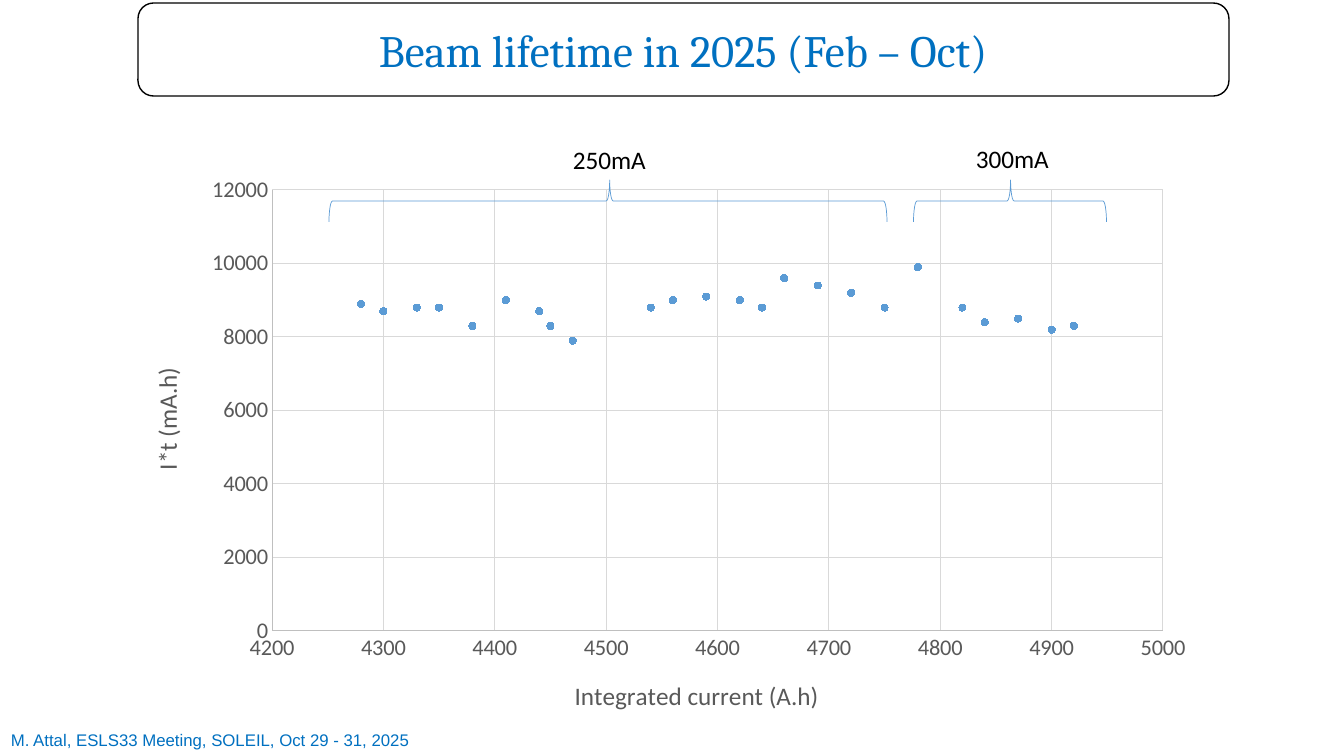
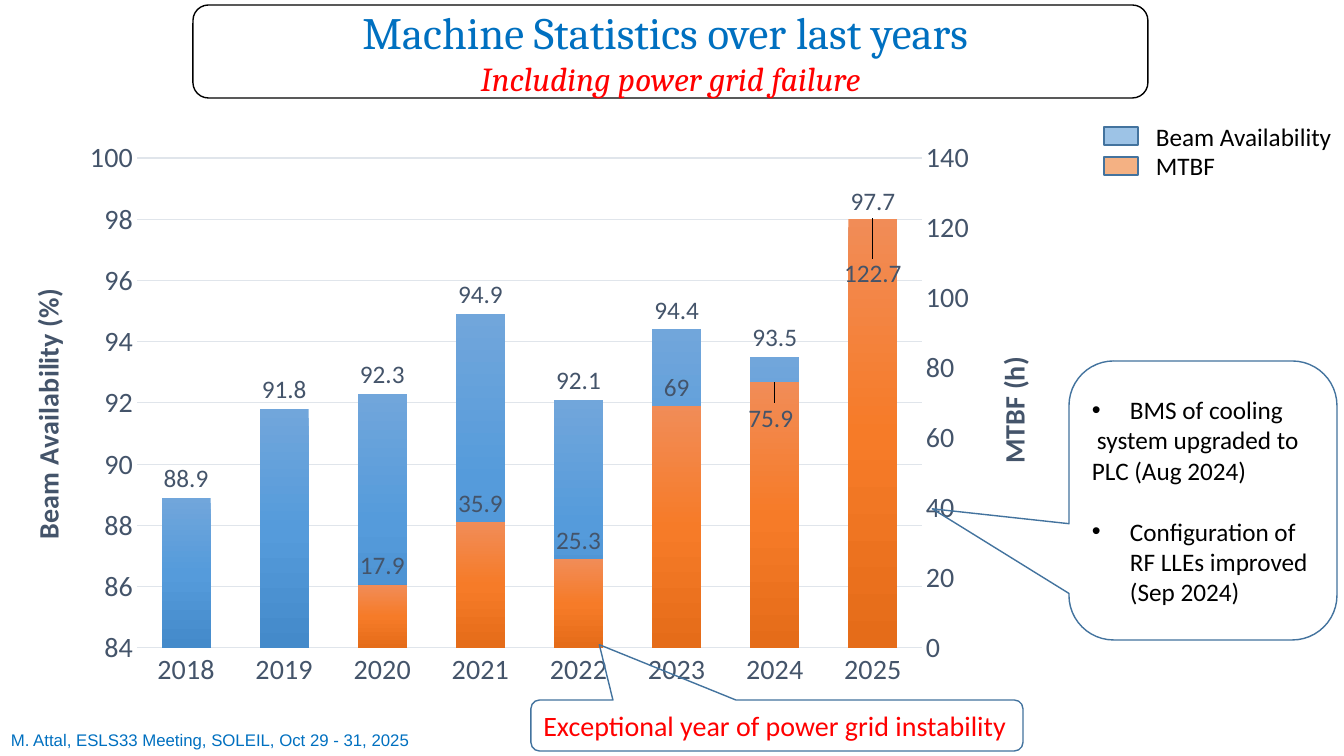
from copy import deepcopy

from pptx import Presentation, util as u
from pptx.chart import axis as ax, data
from pptx.dml import color
from pptx.enum import chart as ec, shapes, text
from pptx.oxml import parse_xml
from pptx.oxml.ns import nsdecls, qn

PX = 914400 / 100.8
BLUE, RED, BLACK, WHITE = "0070C0", "FF0000", "000000", "FFFFFF"
EDGE, SLATE, GRAY, DOT = "43739E", "44546A", "595959", "5B9BD5"
hue = color.RGBColor.from_string


def dress(font, size, tint, name="Calibri", **more):
    font.color.rgb = hue(tint)
    for key, val in dict(size=u.Pt(size), name=name, **more).items():
        setattr(font, key, val)


def lay(node, spot, mode="", **frac):
    """Give a chart part a manual layout, as child number spot."""
    for old in node.findall(qn("c:layout")):
        node.remove(old)
    tags = '<c:layoutTarget val="inner"/>' if "w" in frac else ""
    if mode:
        tags += f'<c:xMode val="{mode}"/><c:yMode val="{mode}"/>'
    tags += "".join(f'<c:{k} val="{v:.4f}"/>' for k, v in frac.items())
    node.insert(spot, parse_xml(
        f'<c:layout {nsdecls("c")}><c:manualLayout>{tags}</c:manualLayout></c:layout>'))


prs = Presentation()
prs.slide_width, prs.slide_height = u.Emu(12192000), u.Emu(6858000)

# Titles over rounded frames
heads = [
    ((138, 3, 1091, 93), [("Beam lifetime in 2025 (Feb – Oct)", 32, BLUE, False)]),
    ((193, 5, 955, 93), [("Machine Statistics over last years ", 32, BLUE, False),
                         ("Including power grid failure", 24, RED, True)]),
]
pages = []
for box, lines in heads:
    page = prs.slides.add_slide(prs.slide_layouts[5])
    pages.append(page)
    spot = [int(n * PX) for n in box]
    head = page.shapes.title
    head.left, head.top, head.width, head.height = spot
    panel = page.shapes.add_shape(shapes.MSO_SHAPE.ROUNDED_RECTANGLE, *spot)
    head.element.addprevious(panel.element)
    panel.shadow.inherit = False
    panel.fill.solid()
    panel.fill.fore_color.rgb = hue(WHITE)
    panel.line.color.rgb = hue(BLACK)
    panel.line.width = u.Pt(1)
    frame = head.text_frame
    frame.auto_size = text.MSO_AUTO_SIZE.NONE
    frame.vertical_anchor = text.MSO_ANCHOR.MIDDLE
    for i, (words, size, tint, slant) in enumerate(lines):
        para = frame.add_paragraph() if i else frame.paragraphs[0]
        para.alignment = text.PP_ALIGN.CENTER
        run = para.add_run()
        run.text = words
        dress(run.font, size, tint, "Cambria", italic=slant)
life, stats = pages

# Chart data
points = [
    (4280, 8900), (4300, 8700), (4330, 8800), (4350, 8800), (4380, 8300), (4410, 9000),
    (4440, 8700), (4450, 8300), (4470, 7900), (4540, 8800), (4560, 9000), (4590, 9100),
    (4620, 9000), (4640, 8800), (4660, 9600), (4690, 9400), (4720, 9200), (4750, 8800),
    (4780, 9900), (4820, 8800), (4840, 8400), (4870, 8500), (4900, 8200), (4920, 8300),
]
dots = data.XyChartData()
series = dots.add_series("I*t")
for x, y in points:
    series.add_data_point(x, y)
bars = data.CategoryChartData()
bars.categories = [str(year) for year in range(2018, 2026)]
bars.add_series("Beam Availability", [88.9, 91.8, 92.3, 94.9, 92.1, 94.4, 93.5, 97.7])
bars.add_series("MTBF", [None, None, 17.9, 35.9, 25.3, 69, 75.9, 122.7])

charts = []
for page, kind, source, box, plot in [
    (life, ec.XL_CHART_TYPE.XY_SCATTER, dots, (127, 165, 1080, 572), (272, 190, 891, 441)),
    (stats, ec.XL_CHART_TYPE.COLUMN_CLUSTERED, bars, (6, 129, 1050, 570), (137, 158, 785, 490)),
]:
    chart = page.shapes.add_chart(kind, *[int(n * PX) for n in box], source).chart
    chart.has_legend = chart.has_title = False
    dress(chart.font, 10, BLACK)
    left, top, wide, high = box
    lay(chart.element.find(".//" + qn("c:plotArea")), 0, "edge",
        x=(plot[0] - left) / wide, y=(plot[1] - top) / high,
        w=plot[2] / wide, h=plot[3] / high)
    charts.append((chart, box))
(scatter, area), (column, field) = charts

# Scatter markers
series = scatter.plots[0].series[0]
series.format.line.fill.background()
series.smooth = False
mark = series.marker
mark.style, mark.size = ec.XL_MARKER_STYLE.CIRCLE, 5
mark.format.fill.solid()
mark.format.fill.fore_color.rgb = hue(DOT)
mark.format.line.color.rgb = hue(DOT)

# MTBF goes to a second pair of axes
plot = column.plots[0]
plot.gap_width, plot.overlap, plot.vary_by_categories = 100, -24, False
first = column.element.find(".//" + qn("c:barChart"))
second = deepcopy(first)
first.remove(first.findall(qn("c:ser"))[1])
second.remove(second.findall(qn("c:ser"))[0])
first.addnext(second)
base, side = column.category_axis._element, column.value_axis._element
base2, side2 = deepcopy(base), deepcopy(side)
side.addnext(side2)
side2.addnext(base2)
for node, own, other in [(base2, "11", "12"), (side2, "12", "11")]:
    node.find(qn("c:axId")).set("val", own)
    node.find(qn("c:crossAx")).set("val", other)
for node, key in zip(second.findall(qn("c:axId")), ("11", "12")):
    node.set("val", key)
hidden = ax.CategoryAxis(base2)
hidden.visible = False
hidden.tick_label_position = ec.XL_TICK_LABEL_POSITION.NONE
hidden.major_tick_mark = ec.XL_TICK_MARK.NONE
side2.find(qn("c:axPos")).set("val", "r")
side2.find(qn("c:crosses")).set("val", "max")

# Axes: title, its corner and turn, scale, number format, line and grid
axes = [
    (scatter.category_axis, area, "Integrated current (A.h)", (570, 674), 0,
     (4200, 5000, 100), "General", "BFBFBF", "D9D9D9"),
    (scatter.value_axis, area, "I*t (mA.h)", (145, 363), -90,
     (0, 12000, 2000), "General", "BFBFBF", "D9D9D9"),
    (column.category_axis, field, "", None, 0, None, "General", "E0E5EB", ""),
    (ax.ValueAxis(side), field, "Beam Availability (%)", (23, 284), -90,
     (84, 100, 2), "#,##0", "", "E0E5EB"),
    (ax.ValueAxis(side2), field, "MTBF (h)", (989, 352), -90,
     (0, 140, 20), "General", "", ""),
]
for axis, box, name, spot, turn, scale, form, line, grid in axes:
    bold = box is field
    size, big, tint = (20, 20, SLATE) if bold else (16, 18, GRAY)
    dress(axis.tick_labels.font, size, tint, bold=False)
    axis.tick_labels.number_format = form
    axis.tick_labels.number_format_is_linked = False
    axis.major_tick_mark = axis.minor_tick_mark = ec.XL_TICK_MARK.NONE
    if scale:
        axis.minimum_scale, axis.maximum_scale, axis.major_unit = scale
    if line:
        axis.format.line.color.rgb = hue(line)
        axis.format.line.width = u.Pt(0.75)
    else:
        axis.format.line.fill.background()
    axis.has_major_gridlines = bool(grid)
    if grid:
        rule = axis.major_gridlines.format.line
        rule.color.rgb = hue(grid)
        rule.width = u.Pt(0.75)
    axis.has_title = bool(name)
    if name:
        frame = axis.axis_title.text_frame
        run = frame.paragraphs[0].add_run()
        run.text = name
        dress(run.font, big, tint, bold=bold)
        frame._txBody.bodyPr.set("rot", str(turn * 60000))
        lay(axis._element.find(qn("c:title")), 1, "edge",
            x=(spot[0] - box[0]) / box[2], y=(spot[1] - box[1]) / box[3])

# Column shading and labels; moved labels are (point, dx, dy)
looks = [
    (("71A6DB", "559BDB", "448ACA"), "#,##0.0", [(7, 0, -8)]),
    (("F18C57", "F67B28", "E56C19"), "General", [(6, -4, 55), (7, 0, 74)]),
]
for plot, (tints, form, moved) in zip(column.plots, looks):
    series = plot.series[0]
    stops = "".join(f'<a:gs pos="{i * 50000}"><a:srgbClr val="{tint}"/></a:gs>'
                    for i, tint in enumerate(tints))
    series._element.get_or_add_spPr().insert(0, parse_xml(
        f'<a:gradFill {nsdecls("a")} rotWithShape="1"><a:gsLst>{stops}</a:gsLst>'
        '<a:lin ang="5400000" scaled="0"/></a:gradFill>'))
    tags = series.data_labels
    tags.show_value = True
    tags.number_format, tags.number_format_is_linked = form, False
    tags.position = ec.XL_LABEL_POSITION.OUTSIDE_END
    dress(tags.font, 18, SLATE)
    for i, dx, dy in moved:
        tag = series.points[i].data_label
        dress(tag.font, 18, SLATE)
        tag.position = ec.XL_LABEL_POSITION.OUTSIDE_END
        node = [d for d in series._element.iter(qn("c:dLbl"))
                if d.find(qn("c:idx")).get("val") == str(i)][0]
        lay(node, 1, x=dx / field[2], y=dy / field[3])
    # No leader lines to the moved labels
    series._element.find(qn("c:dLbls")).append(parse_xml(
        f'<c:extLst {nsdecls("c")}><c:ext uri="{{CE6537A1-D6FC-4f65-9D91-7224C49458BB}}" '
        'xmlns:c15="http://schemas.microsoft.com/office/drawing/2012/chart">'
        '<c15:showLeaderLines val="0"/></c:ext></c:extLst>'))

# Braces over the two current ranges, turned so the tip points up
for mid, span in [(608, 558), (1010, 193)]:
    deep, cy = 42, 201
    brace = life.shapes.add_shape(
        shapes.MSO_SHAPE.LEFT_BRACE,
        *[int(n * PX) for n in (mid - deep / 2, cy - span / 2, deep, span)])
    brace.rotation = 90
    brace.adjustments[1] = 0.497
    brace.shadow.inherit = False
    brace.fill.background()
    brace.line.color.rgb = hue(DOT)
    brace.line.width = u.Pt(0.5)

# Legend swatches
for i, tint in enumerate(("9DC3E6", "F4B183")):
    swatch = stats.shapes.add_shape(
        shapes.MSO_SHAPE.RECTANGLE, *[int(n * PX) for n in (1104, 127 + 30 * i, 34, 18)])
    swatch.shadow.inherit = False
    swatch.fill.solid()
    swatch.fill.fore_color.rgb = hue(tint)
    swatch.line.color.rgb = hue(EDGE)
    swatch.line.width = u.Pt(1)

# Callouts; each paragraph is (text, bullet, first indent, space before)
calls = [
    ((531, 700, 492, 51), (-0.361, -1.585), 20, RED,
     [("Exceptional year of power grid instability", False, 0, 0)]),
    ((1069, 361, 268, 279), (-1.01, 0.03), 18, BLACK,
     [("BMS of cooling", True, -38, 0),
      ("system upgraded to PLC (Aug 2024)", False, 5, 0),
      ("Configuration of RF LLEs improved (Sep 2024)", True, -38, 22)]),
]
for box, tip, size, tint, lines in calls:
    call = stats.shapes.add_shape(
        shapes.MSO_SHAPE.ROUNDED_RECTANGULAR_CALLOUT, *[int(n * PX) for n in box])
    call.adjustments[0], call.adjustments[1] = tip
    call.shadow.inherit = False
    call.fill.background()
    call.line.color.rgb = hue(EDGE)
    call.line.width = u.Pt(1)
    frame = call.text_frame
    frame.word_wrap = True
    frame.vertical_anchor = text.MSO_ANCHOR.MIDDLE
    for i, (words, dot, shift, gap) in enumerate(lines):
        para = frame.add_paragraph() if i else frame.paragraphs[0]
        para.alignment = text.PP_ALIGN.LEFT
        if gap:
            para.space_before = u.Pt(gap)
        props = para._p.get_or_add_pPr()
        props.set("marL", str(int(38 * PX) if dot else 0))
        props.set("indent", str(int(shift * PX)))
        if dot:
            for tag in ('buFont {} typeface="Arial"', 'buChar {} char="•"'):
                props.append(parse_xml(f"<a:{tag.format(nsdecls('a'))}/>"))
        run = para.add_run()
        run.text = words
        dress(run.font, size, tint)

# Labels and footers
foot = "M. Attal, ESLS33 Meeting, SOLEIL, Oct 29 - 31, 2025"
notes = [
    (life, (563, 139, 140, 40), "250mA", 18, BLACK, "Calibri"),
    (life, (966, 138, 140, 40), "300mA", 18, BLACK, "Calibri"),
    (stats, (1146, 116, 198, 40), "Beam Availability", 18, BLACK, "Calibri"),
    (stats, (1146, 145, 80, 40), "MTBF", 18, BLACK, "Calibri"),
] + [(page, (1, 725, 422, 30), foot, 12, BLUE, "Arial") for page in pages]
for page, box, words, size, tint, face in notes:
    frame = page.shapes.add_textbox(*[int(n * PX) for n in box]).text_frame
    frame.word_wrap = False
    run = frame.paragraphs[0].add_run()
    run.text = words
    dress(run.font, size, tint, face)

prs.save("out.pptx")
